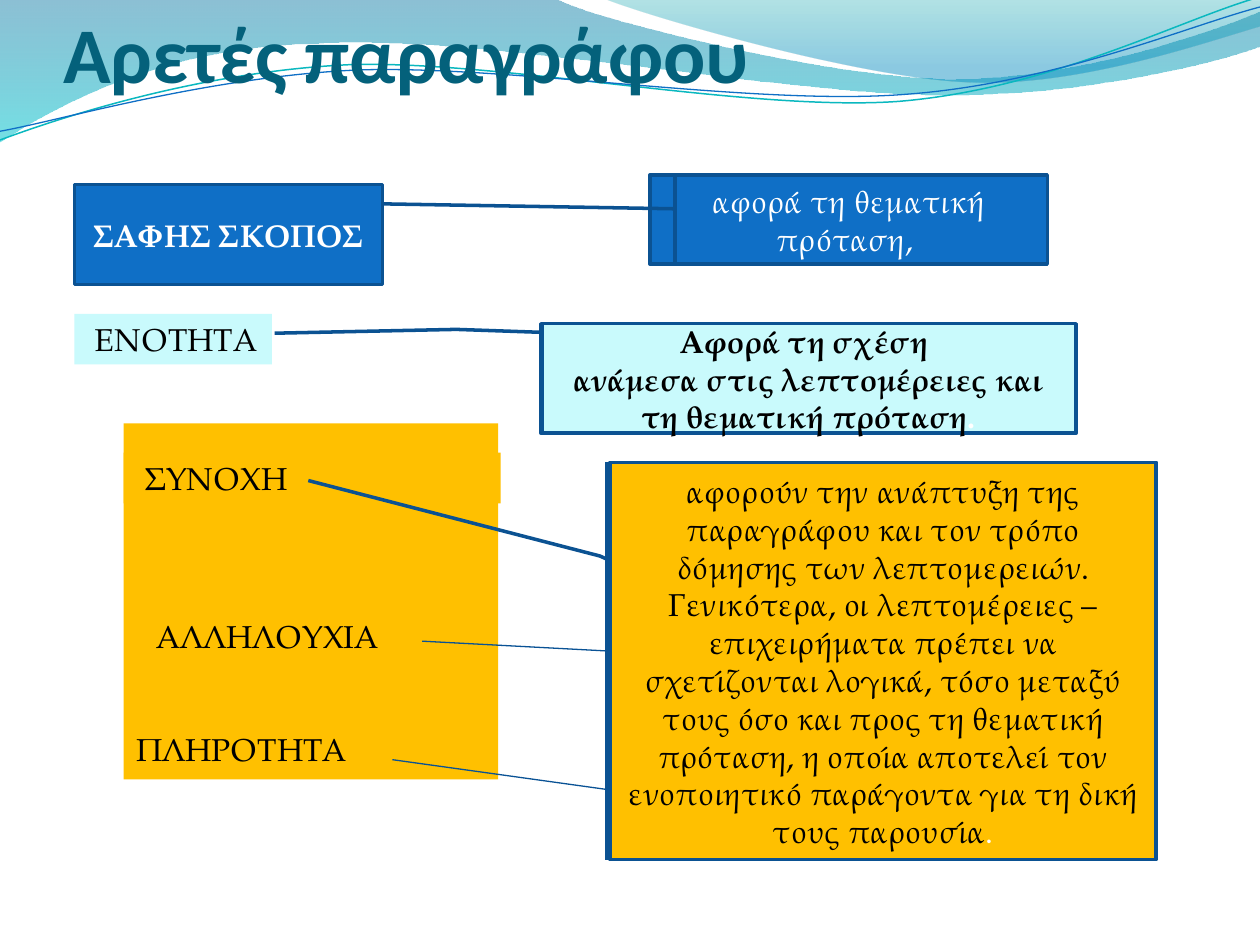
from lxml.etree import SubElement
from pptx import Presentation
from pptx.dml.color import RGBColor
from pptx.enum.shapes import MSO_CONNECTOR, MSO_SHAPE
from pptx.enum.text import MSO_ANCHOR, MSO_AUTO_SIZE, PP_ALIGN
from pptx.oxml.ns import qn
from pptx.util import Pt

COLORS = {
    "title": "04617B", "blue": "0F6FC6", "edge": "0B5292", "link": "095295",
    "pale": "C9FAFC", "gold": "FFC000", "black": "000000", "white": "FFFFFF",
    "teal": "0AB8BF", "wave_blue": "0074A1", "wave_cyan": "00C6CF",
    "wave_teal": "00A1A9", "wave_sky": "008BBF",
}
BODY_FONT = "TeX Gyre Pagella"
CALLOUT_1 = MSO_SHAPE.LINE_CALLOUT_1_BORDER_AND_ACCENT_BAR
CALLOUT_2 = MSO_SHAPE.LINE_CALLOUT_2_BORDER_AND_ACCENT_BAR


def rgb(name):
    """Return the named colour."""
    return RGBColor.from_string(COLORS[name])


def add_curve(s, box, start, segments, close):
    """Add a freeform of lines (2 numbers) and cubic curves (6 numbers)."""
    left, top = box[:2]
    builder = s.shapes.build_freeform(Pt(left + start[0]), Pt(top + start[1]), 1.0)
    builder.add_line_segments(
        [(Pt(left + seg[-2]), Pt(top + seg[-1])) for seg in segments], close=close)
    sp = builder.convert_to_shape()
    sp.shadow.inherit = False
    steps = list(sp._element.spPr.iter(qn("a:lnTo")))
    for step, seg in zip(steps, segments):
        if len(seg) == 6:
            step.tag = qn("a:cubicBezTo")
            step.clear()
            for x, y in zip(seg[::2], seg[1::2]):
                SubElement(step, qn("a:pt"), x=str(Pt(left + x) - sp.left),
                           y=str(Pt(top + y) - sp.top))
    return sp


def add_wave(s, box, start, segments, stops):
    """Add a wave with a translucent vertical gradient."""
    sp = add_curve(s, box, start, segments, True)
    sp.line.fill.background()
    sp.fill.gradient()
    sp.fill.gradient_angle = 270
    for stop, (position, color, _) in zip(sp.fill.gradient_stops, stops):
        stop.position = position
        stop.color.rgb = rgb(color)
    tints = sp._element.spPr.iter(qn("a:srgbClr"))
    for tint, (_, _, opacity) in zip(list(tints), stops):
        SubElement(tint, qn("a:alpha"), val=str(opacity * 1000))


def draw_waves(s, box):
    """Draw the header waves and the two thin curves."""
    add_wave(s, box, (0, 0), [
        (317, -1), (343, 12, 478, 45, 546, 45), (614, 45, 690, 19, 720, 6.5),
        (721, 26), (708, 32, 626, 55, 537, 54), (448, 54, 275, 20, 185, 24.5),
        (93, 26, 33, 60, -1, 81.5),
    ], [(0, "wave_blue", 45), (1, "wave_cyan", 55)])
    add_wave(s, box, (345, -1), [
        (366, 8, 491, 45, 554, 47), (616, 50, 692, 23, 720, 15), (720, 0),
    ], [(0, "wave_teal", 30), (0.8, "wave_sky", 45)])
    strands = [
        ((0, 80), [(35, 67, 114, 41, 199, 37), (284, 34, 427, 64, 513, 58),
                   (600, 51, 675, 11, 719, -1.5)], "teal", 0.85),
        ((0, 75), [(34, 69, 118, 44, 204, 40), (290, 37, 430, 60.5, 516, 54),
                   (602, 48, 678, 15, 720, 4)], "blue", 0.75),
    ]
    for start, segments, color, width in strands:
        sp = add_curve(s, box, start, segments, False)
        sp.fill.background()
        sp.line.color.rgb = rgb(color)
        sp.line.width = Pt(width)


def draw_title(s, box):
    """Place the title placeholder above the waves."""
    title = s.shapes.title
    s.shapes._spTree.append(title._element)
    title.left, title.top, title.width, title.height = map(Pt, box)
    tf = title.text_frame
    tf.text = "Αρετές παραγράφου"
    tf.auto_size = MSO_AUTO_SIZE.NONE
    tf.vertical_anchor = MSO_ANCHOR.BOTTOM
    tf.margin_left = tf.margin_right = 0
    tf.margin_top, tf.margin_bottom = Pt(3.6), Pt(54.5)
    p = tf.paragraphs[0]
    p.alignment = PP_ALIGN.LEFT
    font = p.runs[0].font
    font.name, font.size, font.bold = "Calibri", Pt(45), True
    font.color.rgb = rgb("title")


def add_block(s, box, offset, size, lines, fill, color="black", bold=False,
              kind=MSO_SHAPE.RECTANGLE, adjust=(), edged=True, dot=False):
    """Add a filled shape: centred with an edge, or a plain label."""
    sp = s.shapes.add_shape(kind, Pt(box[0] + offset[0]), Pt(box[1] + offset[1]),
                            *map(Pt, size))
    sp.shadow.inherit = False
    for i, value in enumerate(adjust):
        sp.adjustments[i] = value
    sp.fill.solid()
    sp.fill.fore_color.rgb = rgb(fill)
    if edged:
        sp.line.color.rgb = rgb("edge")
        sp.line.width = Pt(2)
    else:
        sp.line.fill.background()
    tf = sp.text_frame
    tf.word_wrap = True
    tf.vertical_anchor = MSO_ANCHOR.MIDDLE if edged else MSO_ANCHOR.TOP
    tf.text = "\n".join(lines)
    if dot:
        tf.paragraphs[-1].add_run().text = "."
    for p in tf.paragraphs:
        p.alignment = PP_ALIGN.CENTER if edged else PP_ALIGN.LEFT
        for r in p.runs:
            r.font.name, r.font.size, r.font.bold = BODY_FONT, Pt(18), bold
            r.font.color.rgb = rgb(color)
    if dot:
        tf.paragraphs[-1].runs[-1].font.color.rgb = rgb("white")
    return sp


def add_link(s, box, start, end):
    """Add a thin line between two points of the box."""
    ends = [Pt(box[i] + point[i]) for point in (start, end) for i in (0, 1)]
    line = s.shapes.add_connector(MSO_CONNECTOR.STRAIGHT, *ends)
    line.line.color.rgb = rgb("link")
    line.line.width = Pt(0.75)
    SubElement(line._element.spPr, qn("a:effectLst"))


def draw_purpose(s, box):
    """Draw the clear purpose row."""
    add_block(s, box, (329, 0), (227, 51), ["αφορά τη θεματική πρόταση, "],
              "blue", "white", kind=CALLOUT_1,
              adjust=(0.379, 0.063, 0.324, -0.67))
    add_block(s, box, (0, 5.5), (176, 57), ["ΣΑΦΗΣ ΣΚΟΠΟΣ"], "blue", "white",
              bold=True, kind=MSO_SHAPE.FLOWCHART_PROCESS)


def draw_unity(s, box):
    """Draw the unity row."""
    label = add_block(s, box, (0, 0), (113, 29), ["ΕΝΟΤΗΤΑ"], "pale", edged=False)
    label.text_frame.margin_left = Pt(11.7)
    add_block(s, box, (266.5, 5.7), (306, 62.5),
              ["Αφορά τη σχέση ",
               "ανάμεσα στις λεπτομέρειες και τη θεματική πρόταση"],
              "pale", bold=True, kind=CALLOUT_2, dot=True,
              adjust=(0.079, 0.003, 0.052, -0.158, 0.087, -0.497))


def draw_development(s, box):
    """Draw the three development virtues and their explanation."""
    panel = add_block(s, box, (0, 0), (214, 203.5), ["ΠΛΗΡΟΤΗΤΑ"], "gold", edged=False)
    panel.text_frame.vertical_anchor = MSO_ANCHOR.BOTTOM
    panel.text_frame.margin_bottom = Pt(6.6)
    label = add_block(s, box, (0, 16.7), (215.5, 29), ["ΣΥΝΟΧΗ"], "gold", edged=False)
    label.text_frame.margin_left = Pt(11.7)
    add_block(s, box, (11.5, 107.3), (170, 29), ["ΑΛΛΗΛΟΥΧΙΑ"], "gold", edged=False)
    add_block(s, box, (278, 22.3), (312, 227),
              ["αφορούν την ανάπτυξη της παραγράφου και τον τρόπο δόμησης των "
               "λεπτομερειών. Γενικότερα, οι λεπτομέρειες – επιχειρήματα πρέπει "
               "να σχετίζονται λογικά, τόσο μεταξύ τους όσο και προς τη θεματική "
               "πρόταση, η οποία αποτελεί τον ενοποιητικό παράγοντα για τη δική "
               "τους παρουσία"],
              "gold", kind=CALLOUT_2, dot=True,
              adjust=(0.244, -0.006, 0.236, -0.019, 0.046, -0.553))
    add_link(s, box, (278, 130.2), (170.5, 124.5))
    add_link(s, box, (278, 209.5), (153.5, 192.2))


def main():
    """Build and save the slide."""
    prs = Presentation()
    prs.slide_width, prs.slide_height = Pt(720), Pt(540)
    s = prs.slides.add_slide(prs.slide_layouts[5])
    draw_waves(s, (0, 0, 720, 81))
    draw_title(s, (36, 15, 648, 96.5))
    draw_purpose(s, (42.5, 100, 556, 62.5))
    draw_unity(s, (42.5, 179.3, 572.5, 68.5))
    draw_development(s, (70.7, 241.9, 590, 249))
    prs.save("out.pptx")


if __name__ == "__main__":
    main()
